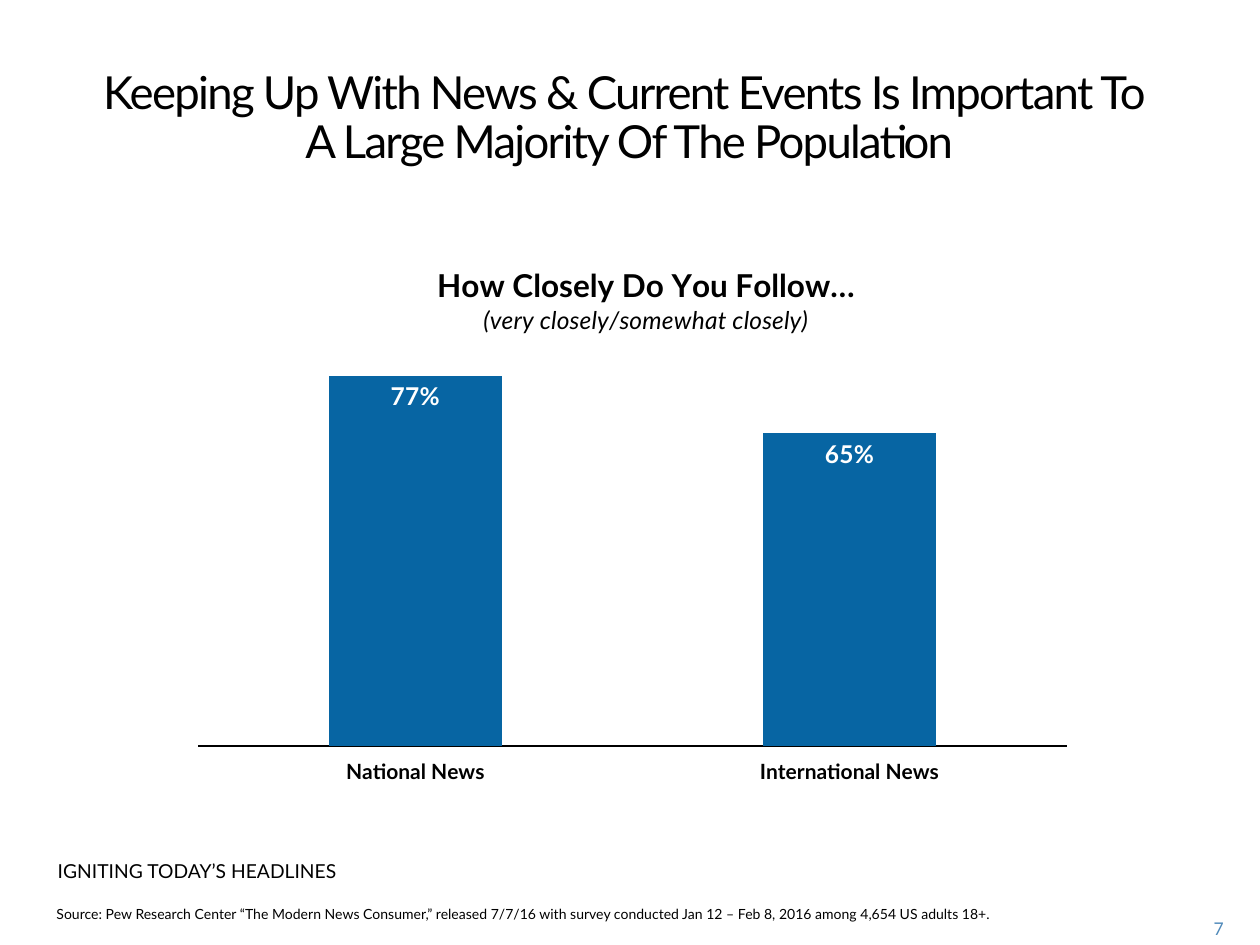
from lxml.etree import SubElement as Sub
from pptx import Presentation
from pptx.chart.data import CategoryChartData as Data
from pptx.dml.color import RGBColor
from pptx.enum.chart import XL_CHART_TYPE as Kind, XL_LABEL_POSITION as Spot
from pptx.enum.chart import XL_TICK_LABEL_POSITION as Place, XL_TICK_MARK as Tick
from pptx.enum.text import PP_ALIGN as Align
from pptx.oxml.ns import qn
from pptx.util import Inches, Pt

BLACK = RGBColor(0x00, 0x00, 0x00)
WHITE = RGBColor(0xFF, 0xFF, 0xFF)
BLUE = RGBColor(0x07, 0x65, 0xA3)
PALE = RGBColor(0x50, 0x8A, 0xBA)


def assign(item, values):
    """Set each named value on the item."""
    for name, value in values.items():
        setattr(item, name, value)


class Page:
    """Holds the style and the current slide."""

    face = "Lato"

    def __init__(self, slide):
        """Keep the slide to draw on."""
        self.slide = slide

    def style(self, font, size, color=BLACK, **more):
        """Format one font."""
        assign(font, {"name": self.face, "size": Pt(size), **more})
        font.color.rgb = color

    def text(self, words, box, size, color=BLACK, track=0, **form):
        """Add a wrapped text box."""
        frame = self.slide.shapes.add_textbox(*map(Inches, box)).text_frame
        frame.word_wrap = True
        para = frame.paragraphs[0]
        para.text = words
        assign(para, form)
        for run in para.runs:
            self.style(run.font, size, color)
            if track:
                run.font._element.set("spc", str(track))

    def layout(self, parent, index, values):
        """Place a chart part by fractions of the chart."""
        for old in parent.findall(qn("c:layout")):
            parent.remove(old)
        outer = Sub(parent, qn("c:layout"))
        parent.insert(index, outer)
        inner = Sub(outer, qn("c:manualLayout"))
        for tag, value in values.items():
            Sub(inner, qn("c:" + tag)).set("val", str(value))

    def title(self, chart, lines):
        """Write the chart title, one paragraph a line."""
        frame = chart.chart_title.text_frame
        for count, (words, size, form) in enumerate(lines):
            para = frame.add_paragraph() if count else frame.paragraphs[0]
            run = para.add_run()
            run.text = words
            self.style(run.font, size, **form)
        self.layout(chart.chart_title._element, 1,
                    {"xMode": "edge", "yMode": "edge", "x": 0.28, "y": 0.01})

    def columns(self, box, rates, lines):
        """Add the column chart."""
        data = Data(number_format="0%")
        data.categories = list(rates)
        data.add_series("Series 1", list(rates.values()))
        chart = self.slide.shapes.add_chart(
            Kind.COLUMN_STACKED, *map(Inches, box), data).chart
        chart.has_legend = False
        self.style(chart.font, 10)
        self.title(chart, lines)

        assign(chart.value_axis, {"minimum_scale": 0, "maximum_scale": 0.8,
                                  "has_major_gridlines": False, "visible": False})
        axis = chart.category_axis
        assign(axis, {"major_tick_mark": Tick.NONE, "minor_tick_mark": Tick.NONE,
                      "tick_label_position": Place.LOW})
        self.style(axis.tick_labels.font, 12, bold=True)
        axis.format.line.width = Pt(0.75)
        axis.format.line.color.rgb = BLACK

        plot = chart.plots[0]
        assign(plot, {"gap_width": 150, "overlap": 100, "vary_by_categories": False,
                      "has_data_labels": True})
        assign(plot.data_labels, {"show_value": True, "position": Spot.INSIDE_END,
                                  "number_format": "0%", "number_format_is_linked": False})
        self.style(plot.data_labels.font, 14, WHITE, bold=True)
        fill = plot.series[0].format.fill
        fill.solid()
        fill.fore_color.rgb = BLUE
        self.layout(chart._chartSpace.chart.plotArea, 0,
                    {"layoutTarget": "inner", "xMode": "edge", "yMode": "edge",
                     "x": 0.02, "y": 0.2, "w": 0.96, "h": 0.72})


def main():
    """Build and save the slide."""
    deck = Presentation()
    assign(deck, {"slide_width": Inches(10), "slide_height": Inches(7.5)})
    page = Page(deck.slides.add_slide(deck.slide_layouts[6]))
    page.text("7", (9.2, 7.24, 0.61, 0.25), 10, PALE, alignment=Align.RIGHT)
    page.text("Keeping Up With News & Current Events Is Important To \v"
              "A Large Majority Of The Population",
              (0.18, 0.5, 9.63, 0.68), 26, track=-100,
              alignment=Align.CENTER, line_spacing=Pt(28))
    page.columns((1.43, 2.02, 7.18, 4.24),
                 {"National News": 0.77, "International News": 0.65},
                 [("How Closely Do You Follow…", 18, {"bold": True}),
                  ("(very closely/somewhat closely)", 14, {"bold": False, "italic": True})])
    page.text("Source: Pew Research Center “The Modern News Consumer,” released 7/7/16 "
              "with survey conducted Jan 12 – Feb 8, 2016 among 4,654 US adults 18+.",
              (0.35, 7.14, 7.83, 0.23), 8)
    page.text("IGNITING TODAY’S HEADLINES", (0.36, 6.77, 2.72, 0.47), 11)
    deck.save("out.pptx")


if __name__ == "__main__":
    main()
